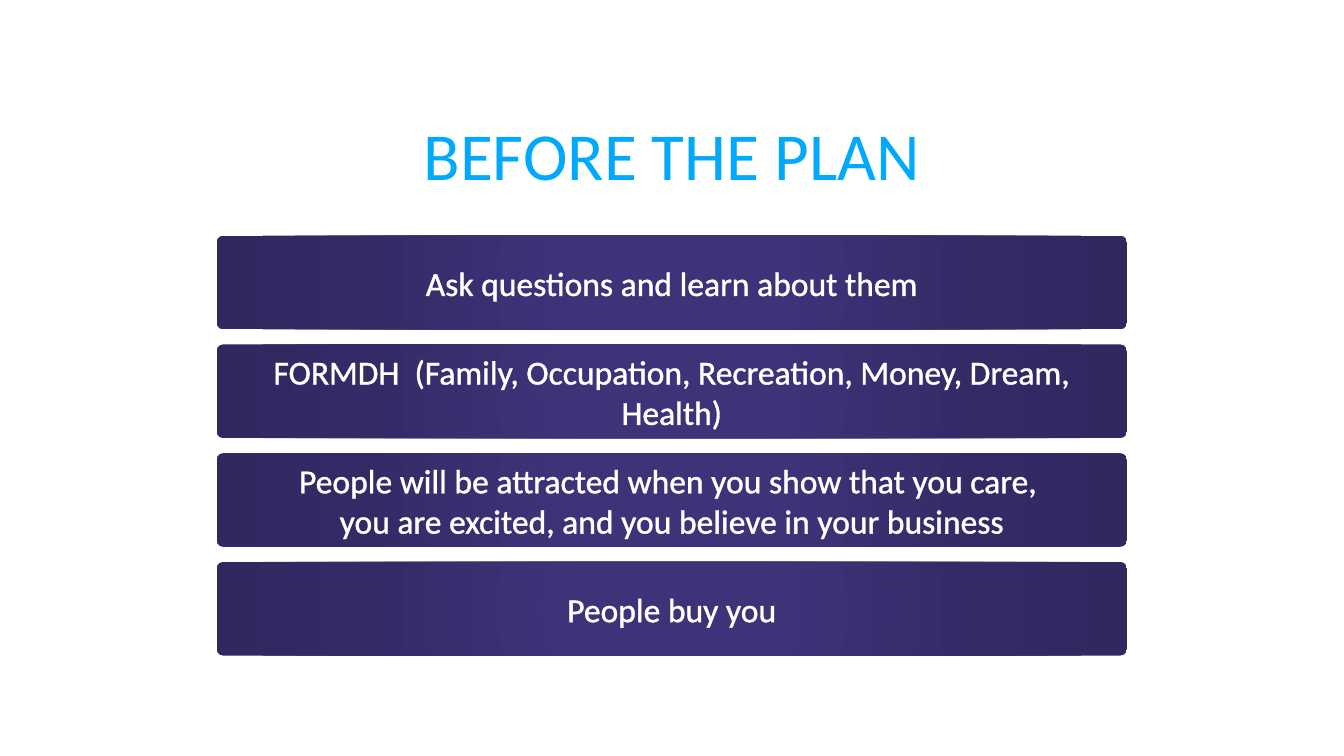
from lxml.etree import SubElement
from pptx import Presentation
from pptx.dml.color import RGBColor
from pptx.enum.shapes import MSO_SHAPE
from pptx.enum.text import MSO_ANCHOR, MSO_AUTO_SIZE, PP_ALIGN
from pptx.oxml import parse_xml
from pptx.oxml.ns import nsdecls, qn
from pptx.util import Cm, Pt

FONT = "Calibri"
WHITE = "FFFFFF"
TITLE_BLUE = "00A9FC"
BAR_STOPS = [(0, "3D3379"), (23, "3D3379"), (69, "332B66"), (97, "30285F")]
BAR_LEFT, BAR_TOP, BAR_WIDTH, BAR_HEIGHT = 5.46, 5.94, 22.94, 2.36
BAR_PITCH = 2.74
ADVICE = [
    "Ask questions and learn about them",
    "FORMDH  (Family, Occupation, Recreation, Money, Dream, Health)",
    "People will be attracted when you show that you care, \n"
    "you are excited, and you believe in your business",
    "People buy you",
]


def color(hex_code):
    """Turn a hex string into a colour."""
    return RGBColor.from_string(hex_code)


def outline_run(run, hex_code):
    """Draw a quarter-point outline round the letters of a run."""
    outline = parse_xml(f'<a:ln {nsdecls("a")} w="3175"/>')
    fill = SubElement(outline, qn("a:solidFill"))
    SubElement(fill, qn("a:srgbClr"), val=hex_code)
    run.font._element.insert(0, outline)


def write_text(frame, text, size, hex_code):
    """Fill a frame with centred, outlined text."""
    frame.word_wrap = True
    frame.text = text
    for paragraph in frame.paragraphs:
        paragraph.alignment = PP_ALIGN.CENTER
        for run in paragraph.runs:
            run.font.size = Pt(size)
            run.font.name = FONT
            run.font.color.rgb = color(hex_code)
            outline_run(run, hex_code)


def fill_radial(shape, stops):
    """Give a shape a gradient that spreads from its centre."""
    shape.fill.gradient()
    gradient = shape.fill._xPr.find(qn("a:gradFill"))
    for child in list(gradient):
        gradient.remove(child)
    stop_list = SubElement(gradient, qn("a:gsLst"))
    for percent, hex_code in stops:
        stop = SubElement(stop_list, qn("a:gs"), pos=str(percent * 1000))
        SubElement(stop, qn("a:srgbClr"), val=hex_code)
    spread = SubElement(gradient, qn("a:path"), {"path": "circle"})
    SubElement(spread, qn("a:fillToRect"), dict.fromkeys("ltrb", "50000"))


def add_title(slide, text):
    """Place the slide heading."""
    heading = slide.shapes.add_textbox(Cm(7.01), Cm(2.72), Cm(19.84), Cm(2.31))
    write_text(heading.text_frame, text, 48, TITLE_BLUE)
    heading.text_frame.auto_size = MSO_AUTO_SIZE.SHAPE_TO_FIT_TEXT


def add_bar(slide, top, text):
    """Place one rounded bar of advice."""
    bar = slide.shapes.add_shape(
        MSO_SHAPE.ROUNDED_RECTANGLE,
        Cm(BAR_LEFT), Cm(top), Cm(BAR_WIDTH), Cm(BAR_HEIGHT),
    )
    bar.adjustments[0] = 0.07
    bar.shadow.inherit = False
    bar.line.fill.background()
    fill_radial(bar, BAR_STOPS)
    write_text(bar.text_frame, text, 24, WHITE)
    bar.text_frame.vertical_anchor = MSO_ANCHOR.MIDDLE


def main():
    """Build and save the slide."""
    deck = Presentation()
    deck.slide_width, deck.slide_height = Cm(33.87), Cm(19.05)
    slide = deck.slides.add_slide(deck.slide_layouts[6])
    add_title(slide, "BEFORE THE PLAN")
    for row, advice in enumerate(ADVICE):
        add_bar(slide, BAR_TOP + row * BAR_PITCH, advice)
    deck.save("out.pptx")


if __name__ == "__main__":
    main()
